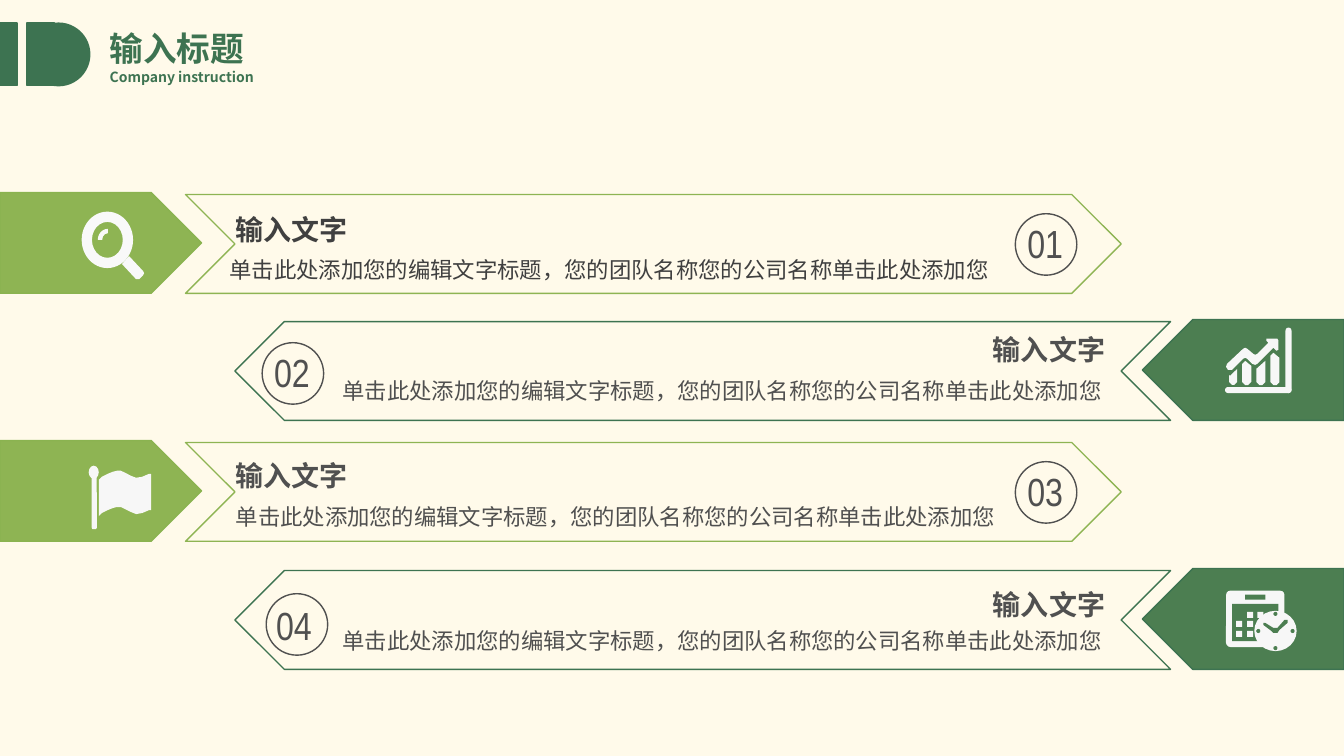
from dataclasses import dataclass
from itertools import product

from lxml import etree
from pptx import Presentation
from pptx import util as u
from pptx.dml import color as dml
from pptx.enum import shapes, text
from pptx.oxml import ns

COLORS = {
    "background": "FFFAEA",
    "light": "8EB453",
    "light_edge": "8AB350",
    "dark": "4C7E51",
    "dark_edge": "3D7351",
    "first_text": "404040",
    "text": "505050",
    "glass": "F9F9F9",
    "icon": "F7F7F7",
}
CJK_FONT = "Noto Sans CJK SC"
NUMBER_FONT = "Arial Narrow"
HEADING = "输入文字"
DETAIL = "单击此处添加您的编辑文字标题，您的团队名称您的公司名称单击此处添加您"
KIND = shapes.MSO_SHAPE

Point = tuple[float, float]
Box = tuple[float, float, float, float]


@dataclass(frozen=True)
class Style:
    fill: str
    edge: str
    outline: str
    tab_left: float
    arrow_left: float
    rotation: int


@dataclass(frozen=True)
class Banner:
    number: str
    top: float
    style: Style
    heading: Point
    detail: Point
    circle: Point
    number_box: Box
    color: str = "text"


LEFT = Style("light", "light_edge", "light", 0, 1.84, 0)
RIGHT = Style("dark", "dark_edge", "dark_edge", 11.33, 2.33, 180)
BANNERS = [
    Banner("01", 1.91, LEFT, (2.24, 2.06), (2.18, 2.49), (10.07, 2.12),
           (10.09, 2.13, 0.58, 0.57), "first_text"),
    Banner("02", 3.17, RIGHT, (9.75, 3.25), (3.3, 3.69), (2.6, 3.4),
           (2.62, 3.41, 0.67, 0.57)),
    Banner("03", 4.37, LEFT, (2.24, 4.5), (2.24, 4.94), (10.07, 4.58),
           (10.09, 4.59, 0.82, 0.57)),
    Banner("04", 5.64, RIGHT, (9.75, 5.78), (3.3, 6.17), (2.64, 5.89),
           (2.64, 5.92, 0.68, 0.57)),
]


def rgb(name: str) -> dml.RGBColor:
    return dml.RGBColor.from_string(COLORS[name])


def paint(shape, fill: str | None, line: str | None) -> None:
    shape.shadow.inherit = False
    if fill:
        shape.fill.solid()
        shape.fill.fore_color.rgb = rgb(fill)
    else:
        shape.fill.background()
    if line:
        shape.line.color.rgb = rgb(line)
        shape.line.width = u.Pt(1)
    else:
        shape.line.fill.background()


def add_preset(slide, kind, box: Box, fill: str | None = None,
               line: str | None = None, adjustments: tuple[float, ...] = (),
               rotation: int = 0) -> None:
    shape = slide.shapes.add_shape(kind, *map(u.Inches, box))
    paint(shape, fill, line)
    for index, value in enumerate(adjustments):
        shape.adjustments[index] = value
    shape.rotation = rotation


def add_outline(slide, points: list[Point], fill: str = "icon") -> None:
    corners = [(u.Inches(x), u.Inches(y)) for x, y in points]
    builder = slide.shapes.build_freeform(*corners[0])
    builder.add_line_segments(corners[1:], close=True)
    paint(builder.convert_to_shape(), fill, None)


def add_text(slide, words: str, box: Box, size: int, color: str,
             font: str = CJK_FONT, bold: bool = False, wrap: bool = True) -> None:
    frame = slide.shapes.add_textbox(*map(u.Inches, box)).text_frame
    frame.word_wrap = wrap
    frame.auto_size = text.MSO_AUTO_SIZE.SHAPE_TO_FIT_TEXT
    run = frame.paragraphs[0].add_run()
    run.text = words
    run.font.name = font
    run.font.size = u.Pt(size)
    run.font.bold = bold
    run.font.color.rgb = rgb(color)
    east_asian = etree.SubElement(run.font._element, ns.qn("a:ea"))
    east_asian.set("typeface", font)


def add_banner(slide, banner: Banner) -> None:
    style = banner.style
    add_preset(slide, KIND.PENTAGON, (style.tab_left, banner.top, 2, 1),
               style.fill, style.edge, rotation=style.rotation)
    add_preset(slide, KIND.CHEVRON, (style.arrow_left, banner.top + 0.02, 9.28, 0.98),
               line=style.outline, rotation=style.rotation)
    add_text(slide, DETAIL, (*banner.detail, 9.06, 0.37), 16, banner.color)
    add_text(slide, HEADING, (*banner.heading, 2.1, 0.43), 20, banner.color, bold=True)
    add_preset(slide, KIND.OVAL, (*banner.circle, 0.61, 0.61), line="text")
    add_text(slide, banner.number, banner.number_box, 28, "text", NUMBER_FONT)


def add_magnifier(slide) -> None:
    add_preset(slide, KIND.DONUT, (0.81, 2.1, 0.51, 0.56), "glass", adjustments=(0.2,))
    # Angles are stored in units of 100000/60000 degrees
    add_preset(slide, KIND.BLOCK_ARC, (0.97, 2.27, 0.2, 0.22), "glass",
               adjustments=(180 * 0.6, 270 * 0.6, 0.22))
    add_outline(slide, [(1.28, 2.54), (1.42, 2.69), (1.43, 2.71), (1.42, 2.73),
                        (1.38, 2.77), (1.35, 2.77), (1.21, 2.62)], "glass")


def add_flag(slide) -> None:
    add_preset(slide, KIND.OVAL, (0.88, 4.62, 0.1, 0.13), "icon")
    add_preset(slide, KIND.ROUNDED_RECTANGLE, (0.91, 4.7, 0.05, 0.55), "icon",
               adjustments=(0.3,))
    hem = [(0.98, 4.76), (1.01, 4.73), (1.07, 4.7), (1.12, 4.68), (1.16, 4.67),
           (1.2, 4.67), (1.24, 4.69), (1.3, 4.72), (1.35, 4.74), (1.41, 4.73),
           (1.48, 4.7), (1.5, 4.7)]
    add_outline(slide, hem + [(x, y + 0.36) for x, y in reversed(hem)])


def add_growth_chart(slide) -> None:
    # Bars: the tops follow the trend line
    bar_tops = [
        [(12.19, 3.72), (12.2, 3.73), (12.27, 3.66)],
        [(12.32, 3.61), (12.35, 3.58), (12.41, 3.63)],
        [(12.46, 3.66), (12.55, 3.58)],
        [(12.6, 3.53), (12.63, 3.5), (12.69, 3.55)],
    ]
    for top in bar_tops:
        left, right = top[0][0], top[-1][0]
        add_outline(slide, top + [(right, 3.79), (right - 0.03, 3.82),
                                  (left + 0.03, 3.82), (left, 3.79)])
    # Trend arrow
    add_outline(slide, [
        (12.16, 3.64), (12.17, 3.61), (12.33, 3.46), (12.35, 3.45), (12.37, 3.46),
        (12.43, 3.51), (12.45, 3.52), (12.47, 3.51), (12.58, 3.4), (12.56, 3.38),
        (12.56, 3.36), (12.67, 3.36), (12.68, 3.38), (12.68, 3.47), (12.66, 3.48),
        (12.63, 3.45), (12.47, 3.61), (12.45, 3.62), (12.42, 3.61), (12.37, 3.56),
        (12.35, 3.55), (12.33, 3.56), (12.22, 3.67), (12.18, 3.67)])
    # Axes
    for box in [(12.15, 3.84, 0.66, 0.06), (12.75, 3.25, 0.06, 0.65)]:
        add_preset(slide, KIND.ROUNDED_RECTANGLE, box, "icon", adjustments=(0.5,))


def add_calendar(slide) -> None:
    # Sheet with its slot and day grid
    add_preset(slide, KIND.ROUNDED_RECTANGLE, (12.16, 5.86, 0.58, 0.56), "icon",
               adjustments=(0.08,))
    for box in [(12.35, 5.9, 0.2, 0.05), (12.22, 5.99, 0.46, 0.37)]:
        add_preset(slide, KIND.RECTANGLE, box, "dark")
    days = list(product((12.26, 12.37, 12.47), (6.07, 6.16, 6.26)))
    for x, y in days[1:7]:
        add_preset(slide, KIND.RECTANGLE, (x, y, 0.06, 0.06), "icon")
    # Clock
    center_x, center_y = 12.65, 6.26
    add_preset(slide, KIND.OVAL, (center_x - 0.21, center_y - 0.2, 0.42, 0.4), "icon")
    for dx, dy in [(0, -1), (1, 0), (0, 1), (-1, 0)]:
        add_preset(slide, KIND.OVAL, (center_x + dx * 0.17 - 0.02,
                                      center_y + dy * 0.17 - 0.02, 0.04, 0.04), "dark")
    add_outline(slide, [(12.53, 6.18), (12.55, 6.18), (12.63, 6.23), (12.67, 6.23),
                        (12.74, 6.15), (12.77, 6.15), (12.77, 6.18), (12.69, 6.25),
                        (12.67, 6.28), (12.63, 6.28), (12.61, 6.26), (12.53, 6.2)],
                "dark")


def add_header(slide) -> None:
    for kind, left, width in [(KIND.RECTANGLE, 0, 0.17), (KIND.RECTANGLE, 0.27, 0.27),
                              (KIND.OVAL, 0.27, 0.62)]:
        add_preset(slide, kind, (left, 0.23, width, 0.62), "dark_edge", "dark_edge")
    add_text(slide, "输入标题", (0.99, 0.23, 1.53, 0.5), 24, "dark_edge",
             bold=True, wrap=False)
    add_text(slide, "Company instruction", (0.99, 0.63, 1.67, 0.27), 10, "dark_edge",
             bold=True, wrap=False)


def main() -> None:
    presentation = Presentation()
    presentation.slide_width = u.Inches(13.33)
    presentation.slide_height = u.Inches(7.5)
    slide = presentation.slides.add_slide(presentation.slide_layouts[6])
    slide.background.fill.solid()
    slide.background.fill.fore_color.rgb = rgb("background")

    for banner in BANNERS:
        add_banner(slide, banner)
    for add_icon in (add_magnifier, add_growth_chart, add_flag, add_calendar):
        add_icon(slide)
    add_header(slide)
    presentation.save("out.pptx")


if __name__ == "__main__":
    main()
